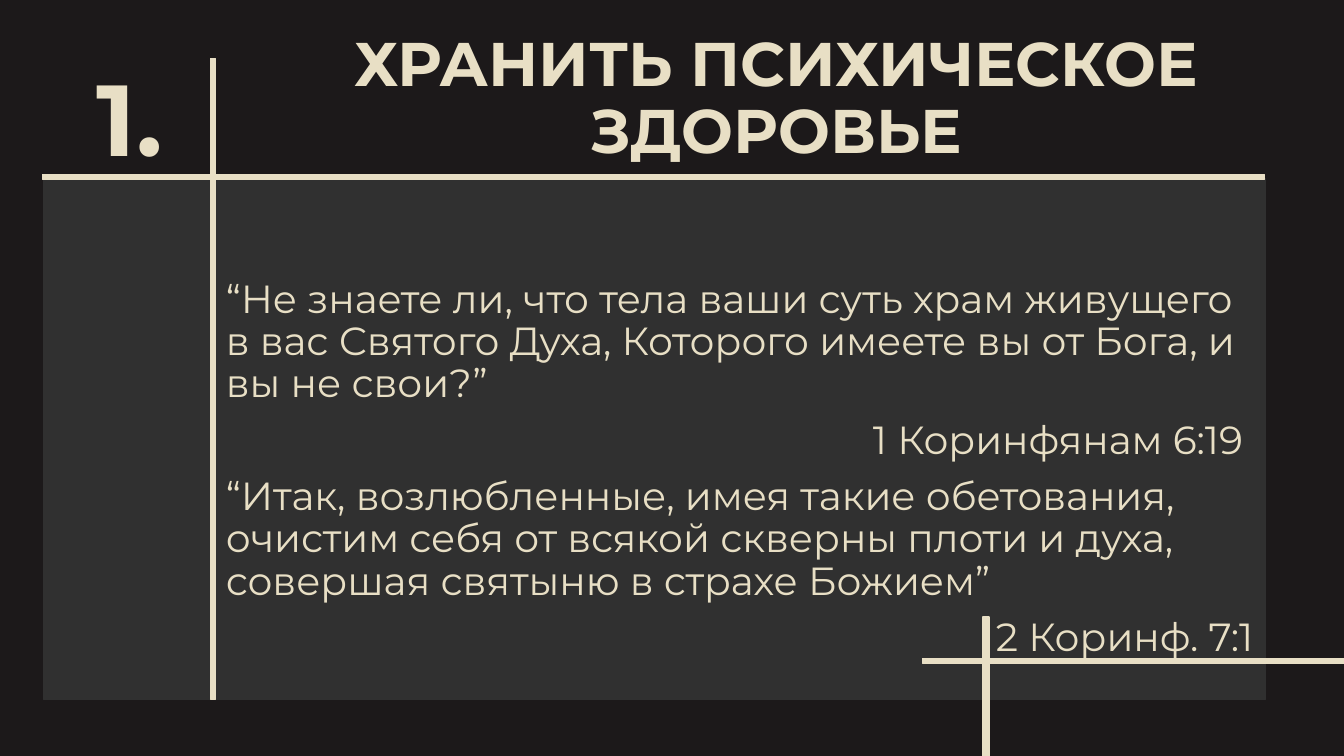
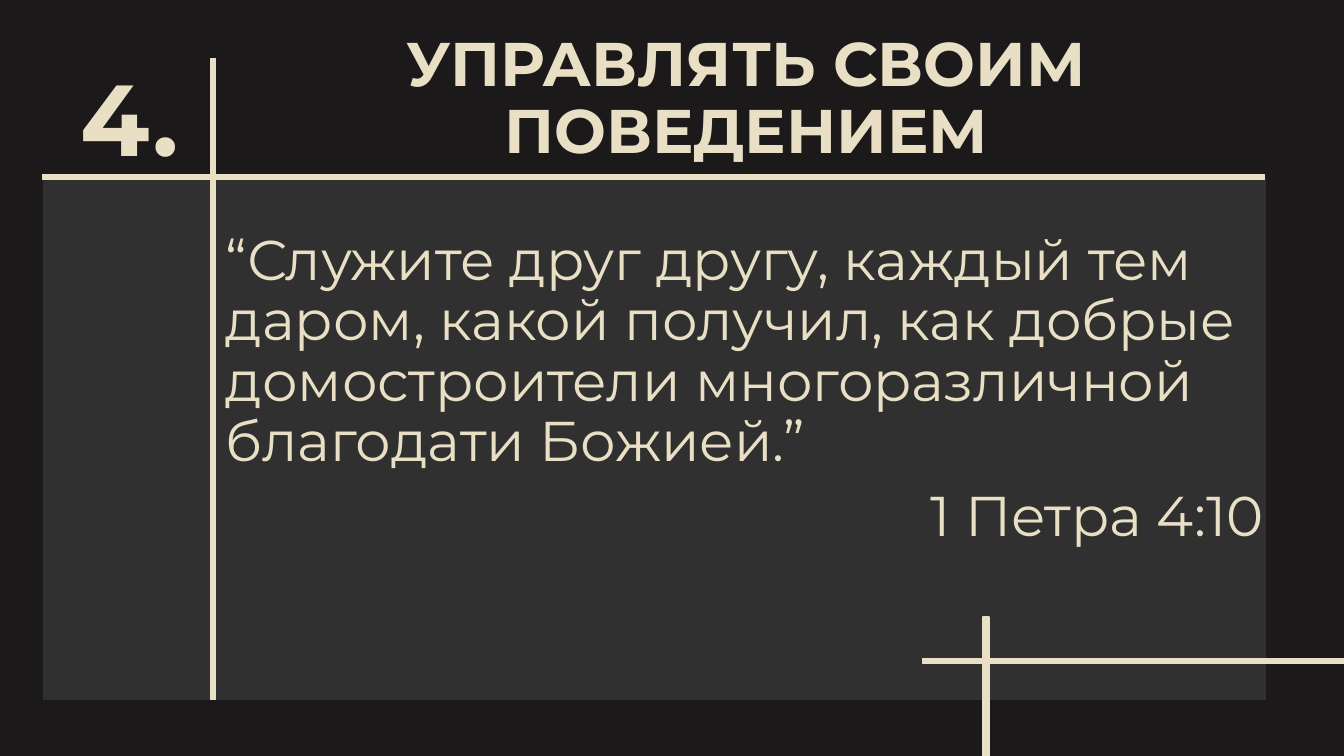
import pptx
import pptx.dml.color
import pptx.enum.shapes
import pptx.enum.text
import pptx.util
import lxml.etree

Inches, Pt = pptx.util.Inches, pptx.util.Pt
ALIGN = pptx.enum.text.PP_ALIGN
ANCHOR = pptx.enum.text.MSO_ANCHOR

WIDTH, HEIGHT = 13.33, 7.5
NIGHT, PANEL, CREAM = "1C191A", "303030", "E8DFC5"
FONT = "Montserrat"
THICK = 0.05

PANEL_BOX = (0.43, 1.77, 12.12, 5.17)
NUMBER_BOX = (0.45, 0.6, 1.67, 1.26)
BANDS = [
    (2.09, 0.58, THICK, 6.36),
    (0.42, 1.73, 12.12, THICK),
    (9.75, 6.12, 0.06, HEIGHT - 6.12),
    (9.15, 6.53, WIDTH - 9.15, THICK),
]

SLIDES = [
    {
        "number": "1.",
        "heading": "ХРАНИТЬ ПСИХИЧЕСКОЕ ЗДОРОВЬЕ",
        "heading_width": 10.92,
        "verse_box": (2.14, 2.72, 10.39, 3.77),
        "verse_size": 28,
        "verses": [
            ("“Не знаете ли, что тела ваши суть храм живущего в вас Святого Духа, "
             "Которого имеете вы от Бога, и вы не свои?”", "1 Коринфянам 6:19 "),
            ("“Итак, возлюбленные, имея такие обетования, очистим себя от всякой "
             "скверны плоти и духа, совершая святыню в страхе Божием”", "2 Коринф. 7:1"),
        ],
    },
    {
        "number": "4.",
        "heading": "УПРАВЛЯТЬ СВОИМ ПОВЕДЕНИЕМ",
        "heading_width": 10.33,
        "verse_box": (2.14, 2.25, 10.49, 4.6),
        "verse_size": 40,
        "verses": [
            ("“Служите друг другу, каждый тем даром, какой получил, как добрые "
             "домостроители многоразличной благодати Божией.”", "1 Петра 4:10"),
        ],
    },
]


def paint(fill, color):
    fill.solid()
    fill.fore_color.rgb = pptx.dml.color.RGBColor.from_string(color)


def place(shape, box):
    shape.left, shape.top, shape.width, shape.height = map(Inches, box)


def add_block(slide, box, color):
    block = slide.shapes.add_shape(
        pptx.enum.shapes.MSO_SHAPE.RECTANGLE, *map(Inches, box))
    block.shadow.inherit = False
    paint(block.fill, color)
    paint(block.line.fill, color)
    block.line.width = Pt(1)


def write(shape, lines, size, bold=False, anchor=ANCHOR.MIDDLE, gap=0):
    frame = shape.text_frame
    frame.word_wrap = True
    frame.auto_size = pptx.enum.text.MSO_AUTO_SIZE.NONE
    frame.vertical_anchor = anchor
    frame.text = "\n".join(text for text, _ in lines)
    for index, (paragraph, (_, align)) in enumerate(zip(frame.paragraphs, lines)):
        paragraph.alignment = align
        paragraph.line_spacing = 0.9
        paragraph.space_before = Pt(gap if index else 0)
        paragraph.font.name = FONT
        paragraph.font.size = Pt(size)
        paragraph.font.bold = bold
        paint(paragraph.font.fill, CREAM)


def remove_bullets(shape):
    for paragraph in shape.text_frame.paragraphs:
        properties = paragraph._p.get_or_add_pPr()
        properties.set("marL", "0")
        properties.set("indent", "0")
        bullet = lxml.etree.Element(pptx.oxml.ns.qn("a:buNone"))
        properties.insert_element_before(bullet, "a:tabLst", "a:defRPr", "a:extLst")


def build_slide(deck, content):
    slide = deck.slides.add_slide(deck.slide_layouts[1])
    number, verses = slide.shapes.title, slide.placeholders[1]
    add_block(slide, PANEL_BOX, PANEL)

    slide.shapes._spTree.append(verses._element)
    place(verses, content["verse_box"])
    lines = [line for quote, source in content["verses"]
             for line in ((quote, ALIGN.LEFT), (source, ALIGN.RIGHT))]
    write(verses, lines, content["verse_size"], anchor=ANCHOR.TOP, gap=10)
    remove_bullets(verses)

    heading = slide.shapes.add_textbox(
        *map(Inches, (2.24, 0.25, content["heading_width"], 1.48)))
    write(heading, [(content["heading"], ALIGN.CENTER)], 44, bold=True)

    for band in BANDS:
        add_block(slide, band, CREAM)

    slide.shapes._spTree.append(number._element)
    place(number, NUMBER_BOX)
    write(number, [(content["number"], ALIGN.CENTER)], 72, bold=True)


def main():
    deck = pptx.Presentation()
    deck.slide_width, deck.slide_height = Inches(WIDTH), Inches(HEIGHT)
    paint(deck.slide_master.background.fill, NIGHT)
    for content in SLIDES:
        build_slide(deck, content)
    deck.save("out.pptx")


if __name__ == "__main__":
    main()
